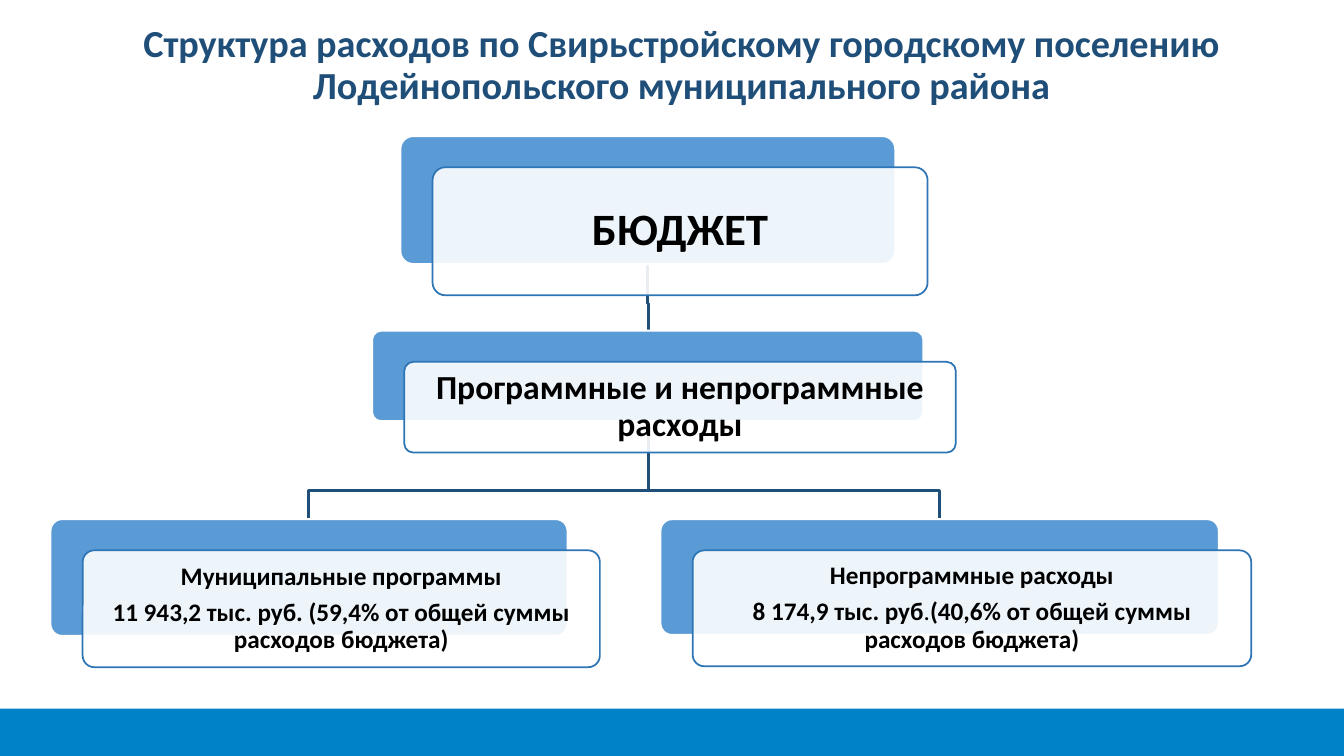
from pptx import Presentation
from pptx.dml.color import RGBColor
from pptx.enum.shapes import MSO_SHAPE as Shape
from pptx.enum.text import MSO_ANCHOR as Anchor, PP_ALIGN as Align
from pptx.oxml.ns import qn
from pptx.util import Pt
from lxml.etree import SubElement

PX = 9144  # EMU in one px, 100 px to the inch
FONT = "Calibri"
COLORS = {
    "footer": "0082C8", "navy": "1F4E79", "plate": "5B9BD5",
    "border": "2E75B6", "white": "FFFFFF", "black": "000000",
}


def color(name):
    return RGBColor.from_string(COLORS[name])


class Deck:
    def __init__(self, width, height):
        self.presentation = Presentation()
        self.presentation.slide_width = width * PX
        self.presentation.slide_height = height * PX
        self.slide = self.presentation.slides.add_slide(self.presentation.slide_layouts[6])
        self.shapes = self.slide.shapes

    def box(self, kind, bounds, fill, line=None, line_width=1.0):
        shape = self.shapes.add_shape(kind, *(value * PX for value in bounds))
        shape.shadow.inherit = False
        shape.fill.solid()
        shape.fill.fore_color.rgb = color(fill)
        if line:
            shape.line.color.rgb = color(line)
            shape.line.width = Pt(line_width)
        else:
            shape.line.fill.background()
        if kind == Shape.ROUNDED_RECTANGLE:
            shape.adjustments[0] = 0.1
        return shape

    def set_text(self, shape, paragraphs, size, font_color, inset, space_after=0.0):
        """Fill a shape with bold centred paragraphs, each a list of (text, bold) runs."""
        frame = shape.text_frame
        frame.word_wrap = True
        frame.vertical_anchor = Anchor.MIDDLE
        frame.margin_left = frame.margin_right = inset * PX
        frame.margin_top = frame.margin_bottom = inset * PX
        for index, runs in enumerate(paragraphs):
            paragraph = frame.add_paragraph() if index else frame.paragraphs[0]
            paragraph.alignment = Align.CENTER
            paragraph.line_spacing = 0.9
            paragraph.space_after = Pt(space_after)
            paragraph.font.name = FONT
            paragraph.font.size = Pt(size)
            paragraph.font.bold = True
            paragraph.font.color.rgb = color(font_color)
            for text, bold in runs:
                run = paragraph.add_run()
                run.text = text
                if not bold:
                    run.font.bold = False

    def title(self, text, bounds, size):
        shape = self.shapes.add_textbox(*(value * PX for value in bounds))
        self.set_text(shape, [[(text, True)]], size, "navy", 10)

    def branch(self, start, elbow_y, end):
        """Draw an elbow line that goes down, across and down again."""
        builder = self.shapes.build_freeform(*start, scale=PX)
        builder.add_line_segments(
            [(start[0], elbow_y), (end[0], elbow_y), end], close=False)
        shape = builder.convert_to_shape()
        shape.shadow.inherit = False
        shape.fill.background()
        shape.line.color.rgb = color("navy")
        shape.line.width = Pt(2)

    def card(self, bounds, paragraphs, size, inset):
        """Draw a blue plate and, shifted over it, a translucent card with text."""
        left, top, width, height = bounds
        self.box(Shape.ROUNDED_RECTANGLE, bounds, "plate", "white", 1.5)
        front = self.box(Shape.ROUNDED_RECTANGLE, (left + 32, top + 31, width, height),
                         "white", "border", 1.25)
        fill_color = front.element.spPr.find(qn("a:solidFill"))[0]
        SubElement(fill_color, qn("a:alpha"), val="90000")
        self.set_text(front, paragraphs, size, "black", inset, space_after=size * 0.35)


def main():
    deck = Deck(1333, 750)
    deck.box(Shape.RECTANGLE, (0, 703, 1333, 47), "footer")
    deck.title("Структура расходов по Свирьстройскому городскому поселению "
               "Лодейнопольского муниципального района", (118, 9, 1116, 113), 27.3)

    deck.branch((643, 418), 487, (932, 515))
    deck.branch((643, 418), 487, (306, 515))
    deck.branch((642, 262), 301, (643, 328))

    deck.card((397, 135, 491, 127), [[("БЮДЖЕТ", True)]], 32, 13)
    deck.card((369, 328, 547, 90), [[("Программные и непрограммные расходы", True)]], 24, 10)
    deck.card((50, 515, 513, 116), [
        [("Муниципальные программы", True)],
        [("11 943,2 тыс. руб. (59,4% от общей суммы расходов бюджета)", True)],
    ], 18, 7)
    deck.card((655, 515, 554, 115), [
        [("Непрограммные расходы", True)],
        [("8 174,9 тыс. руб", True), (".", False),
         ("(40,6% от общей суммы расходов бюджета)", True)],
    ], 18, 7)
    deck.presentation.save("out.pptx")


if __name__ == "__main__":
    main()
